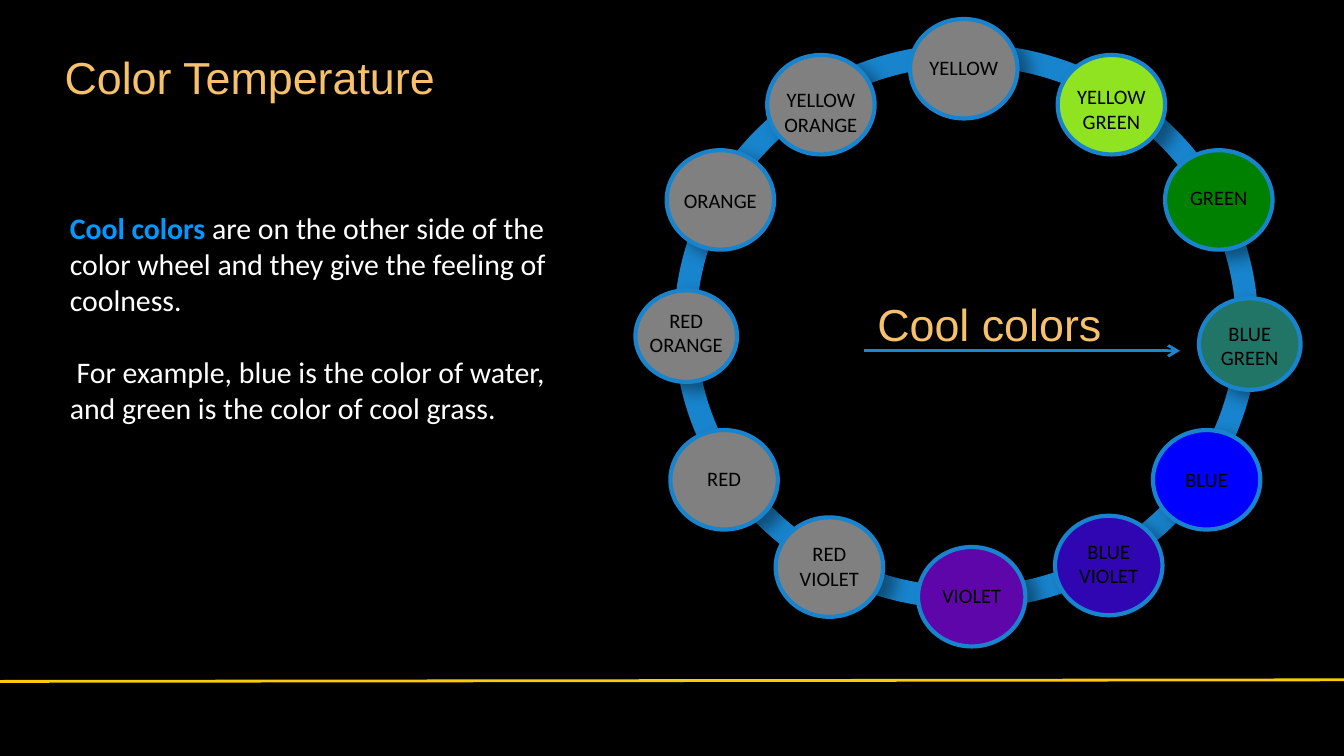
"""Build the cool colors slide with its twelve-part color wheel."""
import pptx
import pptx.dml.color
import pptx.enum.shapes
import pptx.enum.text
import pptx.oxml
import pptx.oxml.ns
import pptx.util

Cm = pptx.util.Cm
Pt = pptx.util.Pt
RGB = pptx.dml.color.RGBColor
OVAL = pptx.enum.shapes.MSO_SHAPE.OVAL
LINE = pptx.enum.shapes.MSO_CONNECTOR.STRAIGHT
CENTER = pptx.enum.text.PP_ALIGN.CENTER

BLACK = RGB(0, 0, 0)
WHITE = RGB(255, 255, 255)
GOLD = RGB(0xFF, 0xCB, 0x0A)
SAND = RGB(0xF6, 0xC1, 0x6A)
SKY = RGB(0x00, 0x99, 0xFF)
RIM = RGB(0x18, 0x84, 0xCD)
ARROW = RGB(0x1D, 0x86, 0xCD)
GRAY = RGB(0x80, 0x80, 0x80)
LIME = RGB(0x8F, 0xE3, 0x21)
GREEN = RGB(0x00, 0x80, 0x00)
TEAL = RGB(0x21, 0x75, 0x67)
BLUE = RGB(0x00, 0x00, 0xFF)
INDIGO = RGB(0x30, 0x06, 0xB3)
VIOLET = RGB(0x5F, 0x06, 0xAB)

deck = pptx.Presentation()
deck.slide_width, deck.slide_height = Cm(25.4), Cm(14.29)
slide = deck.slides.add_slide(deck.slide_layouts[6])
slide.background.fill.solid()
slide.background.fill.fore_color.rgb = BLACK
shapes = slide.shapes


def add_text(words, x, y, w, h, size, face, color):
    frame = shapes.add_textbox(Cm(x), Cm(y), Cm(w), Cm(h)).text_frame
    frame.word_wrap = True
    para = frame.paragraphs[0]
    para.text = words
    para.font.size, para.font.name = Pt(size), face
    para.font.color.rgb = color
    return frame


def add_oval(x, y, w, h, fill, rim, alpha, blur, gap, angle):
    oval = shapes.add_shape(OVAL, Cm(x), Cm(y), Cm(w), Cm(h))
    if fill is None:
        oval.fill.background()
    else:
        oval.fill.solid()
        oval.fill.fore_color.rgb = fill
    oval.line.color.rgb, oval.line.width = RIM, Pt(rim)
    oval.shadow.inherit = False
    effects = oval._element.spPr.find(pptx.oxml.ns.qn("a:effectLst"))
    effects.append(pptx.oxml.parse_xml(
        f'<a:outerShdw {pptx.oxml.ns.nsdecls("a")} blurRad="{Pt(blur)}" '
        f'dist="{Pt(gap)}" dir="{angle * 60000}" rotWithShape="0">'
        f'<a:srgbClr val="{BLACK}"><a:alpha val="{alpha * 1000}"/>'
        '</a:srgbClr></a:outerShdw>'))


add_text("Color Temperature", 0.97, 0.81, 9.12, 1.27, 24, "Arial", SAND)

body = add_text("", 0.74, 3.84, 9.85, 5.05, 16, "Calibri", WHITE)
first, second = body.paragraphs[0], body.add_paragraph()
lead = first.add_run()
lead.text = "Cool colors "
lead.font.bold, lead.font.color.rgb = True, SKY
first.add_run().text = ("are on the other side of the color wheel and they "
                        "give the feeling of coolness.")
second.text = ("For example, blue is the color of water, "
               "and green is the color of cool grass.")
second.space_before = Pt(19.5)
second.font.size, second.font.name = Pt(16), "Calibri"
second.font.color.rgb = WHITE
for para, indent in ((first, 0), (second, 0.13)):
    props = para._p.get_or_add_pPr()
    props.set("marL", str(Cm(0.33)))
    props.set("indent", str(Cm(indent)))

add_text("Cool colors", 16.33, 5.49, 4.8, 2.31, 24, "Arial", SAND)

for x1, y1, x2, y2, color, tip in (
        (0, 12.88, 25.4, 12.85, GOLD, None),
        (16.33, 6.63, 22.3, 6.63, ARROW, "arrow")):
    line = shapes.add_connector(LINE, Cm(x1), Cm(y1), Cm(x2), Cm(y2))
    line.line.color.rgb, line.line.width = color, Pt(1.5)
    if tip:
        line.line._get_or_add_ln().append(pptx.oxml.parse_xml(
            f'<a:tailEnd {pptx.oxml.ns.nsdecls("a")} type="{tip}"/>'))
    line._element.spPr.append(pptx.oxml.parse_xml(
        f'<a:effectLst {pptx.oxml.ns.nsdecls("a")}/>'))

add_oval(12.95, 1.04, 10.62, 10.26, None, 12, 45, 7, 11, 39)

BIG, SMALL = (2.03, 1.88), (1.92, 1.73)
wheel = (
    ("YELLOW", GRAY, 17.2, 0.36, BIG, 0.91, 2.03),
    ("YELLOW GREEN", LIME, 19.99, 1.04, BIG, 1.47, 2.03),
    ("GREEN", GREEN, 22.02, 2.84, BIG, 3.38, 2.57),
    ("BLUE GREEN", TEAL, 22.66, 5.64, SMALL, 5.94, 2.13),
    ("BLUE", BLUE, 21.79, 8.13, BIG, 8.71, 2.03),
    ("BLUE VIOLET", INDIGO, 19.94, 9.75, BIG, 10.06, 2.03),
    ("VIOLET", VIOLET, 17.35, 10.34, BIG, 10.9, 2.49),
    ("RED VIOLET", GRAY, 14.66, 9.78, BIG, 10.11, 2.03),
    ("RED", GRAY, 12.67, 8.13, BIG, 8.69, 2.03),
    ("RED ORANGE", GRAY, 12.01, 5.49, SMALL, 5.69, 2.13),
    ("ORANGE", GRAY, 12.6, 2.84, BIG, 3.43, 2.51),
    ("YELLOW ORANGE", GRAY, 14.5, 1.04, BIG, 1.52, 2.03),
)
for name, fill, x, y, (w, h), top, wide in wheel:
    add_oval(x, y, w, h, fill, 2.25, 40, 8.8, 7, 35)
    tall = 1.19 if " " in name else 0.74
    label = add_text(name, x + (w - wide) / 2, top, wide, tall,
                     11, "Calibri", BLACK)
    label.paragraphs[0].alignment = CENTER

deck.save("out.pptx")
